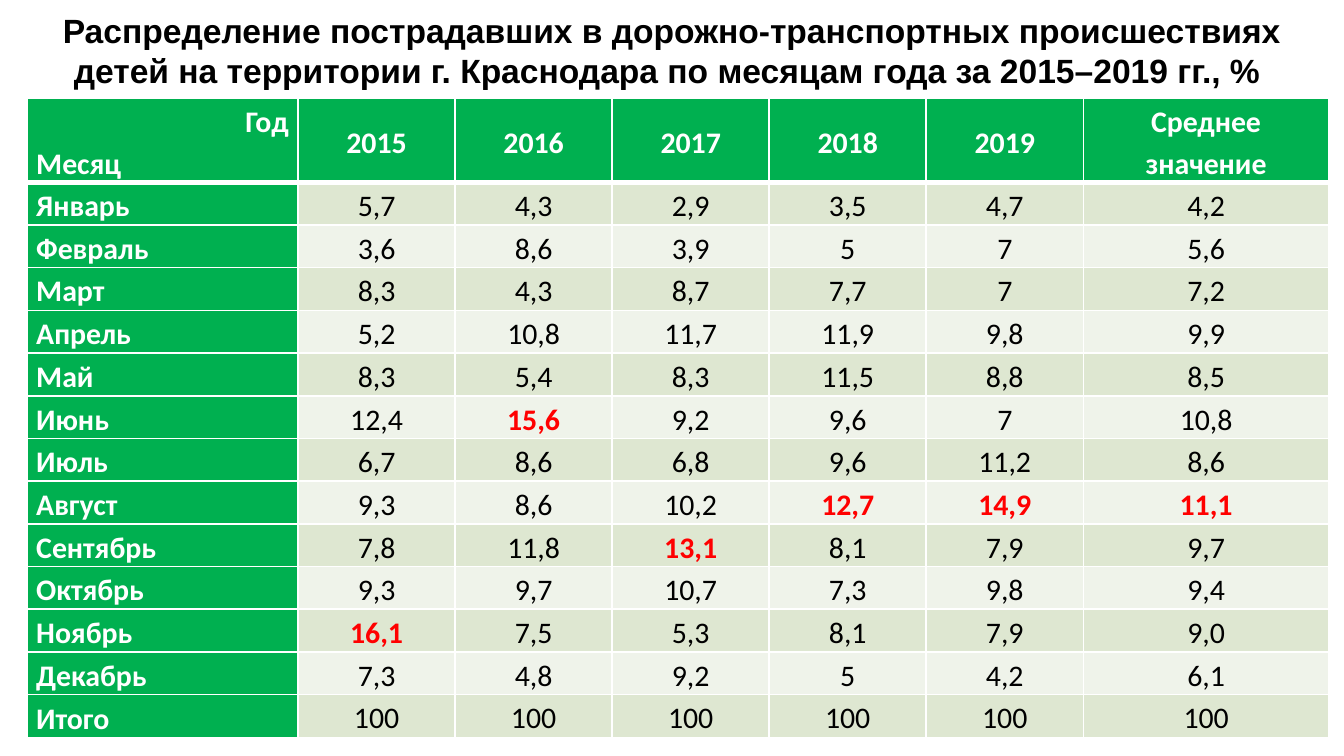
from lxml import etree
from pptx import Presentation
from pptx.dml.color import RGBColor
from pptx.enum.text import MSO_ANCHOR, MSO_AUTO_SIZE, PP_ALIGN
from pptx.oxml.ns import qn
from pptx.util import Inches, Pt

LEFT, CENTER, RIGHT, JUSTIFY = PP_ALIGN.LEFT, PP_ALIGN.CENTER, PP_ALIGN.RIGHT, PP_ALIGN.JUSTIFY
TOP, MIDDLE, BOTTOM = MSO_ANCHOR.TOP, MSO_ANCHOR.MIDDLE, MSO_ANCHOR.BOTTOM
GROW = MSO_AUTO_SIZE.SHAPE_TO_FIT_TEXT
TITLE_ONLY = 5

WHITE, BLACK, RED, GREEN = "FFFFFF", "000000", "FF0000", "00B050"
BANDS = ("DEE7D1", "EFF3EA")

TITLE = ("Распределение пострадавших в дорожно-транспортных происшествиях "
         "детей на территории г. Краснодара по месяцам года за 2015–2019 гг., % ")
HEADINGS = ["2015", "2016", "2017", "2018", "2019", "Среднее\nзначение"]
MONTHS = [
    ("Январь", "5,7 4,3 2,9 3,5 4,7 4,2"),
    ("Февраль", "3,6 8,6 3,9 5 7 5,6"),
    ("Март", "8,3 4,3 8,7 7,7 7 7,2"),
    ("Апрель", "5,2 10,8 11,7 11,9 9,8 9,9"),
    ("Май", "8,3 5,4 8,3 11,5 8,8 8,5"),
    ("Июнь", "12,4 15,6 9,2 9,6 7 10,8"),
    ("Июль", "6,7 8,6 6,8 9,6 11,2 8,6"),
    ("Август", "9,3 8,6 10,2 12,7 14,9 11,1"),
    ("Сентябрь", "7,8 11,8 13,1 8,1 7,9 9,7"),
    ("Октябрь", "9,3 9,7 10,7 7,3 9,8 9,4"),
    ("Ноябрь", "16,1 7,5 5,3 8,1 7,9 9,0"),
    ("Декабрь", "7,3 4,8 9,2 5 4,2 6,1"),
]
TOTAL = ("Итого", "100 100 100 100 100 100")
COLUMN_WIDTHS = [2.02] + [1.17] * 5 + [1.83]
ROW_HEIGHTS = [0.63] + [0.32] * 13


def rgb(value):
    """Turn a hex string into a colour."""
    return RGBColor.from_string(value)


def write(frame, text, aligns=(CENTER,), font="Calibri", size=16, color=BLACK,
          bold=False, spacing=1.15):
    """Write one paragraph per line of text, cycling through the alignments."""
    for index, line in enumerate(text.split("\n")):
        para = frame.paragraphs[0] if index == 0 else frame.add_paragraph()
        para.alignment = aligns[index % len(aligns)]
        para.line_spacing = spacing
        span = para.add_run()
        span.text = line
        span.font.name = font
        span.font.size = Pt(size)
        span.font.bold = bold
        span.font.color.rgb = rgb(color)


def set_border(cell, side, width, color=WHITE):
    """Add a solid border to one side of a cell."""
    properties = cell._tc.get_or_add_tcPr()
    line = etree.SubElement(properties, qn(f"a:ln{side}"), w=str(Pt(width)))
    fill = etree.SubElement(line, qn("a:solidFill"))
    etree.SubElement(fill, qn("a:srgbClr"), val=color)


def fill_cell(cell, text, fill, anchor=MIDDLE, top=1, bottom=1, **text_format):
    """Set the borders, fill, margins and text of a cell."""
    for side, width in (("L", 1), ("R", 1), ("T", top), ("B", bottom)):
        set_border(cell, side, width)
    cell.fill.solid()
    cell.fill.fore_color.rgb = rgb(fill)
    cell.vertical_anchor = anchor
    cell.margin_left = cell.margin_right = Inches(0.07)
    cell.margin_top = cell.margin_bottom = 0
    write(cell.text_frame, text, **text_format)


def add_title(page, left, top, width, height):
    """Place and format the slide title."""
    box = page.shapes.title
    box.left, box.top, box.width, box.height = map(Inches, (left, top, width, height))
    frame = box.text_frame
    frame.word_wrap = True
    frame.auto_size = GROW
    frame.vertical_anchor = TOP
    write(frame, TITLE, font="Arial", size=18, bold=True, spacing=1.0)


def add_month_table(page, left, top, width, height):
    """Add the table of monthly shares, with the peak of each column in red."""
    box = page.shapes.add_table(len(ROW_HEIGHTS), len(COLUMN_WIDTHS),
                                *map(Inches, (left, top, width, height)))
    table = box.table
    for column, share in zip(table.columns, COLUMN_WIDTHS):
        column.width = Inches(width * share / sum(COLUMN_WIDTHS))
    for row, share in zip(table.rows, ROW_HEIGHTS):
        row.height = Inches(height * share / sum(ROW_HEIGHTS))

    heading = {"color": WHITE, "bold": True}
    fill_cell(table.cell(0, 0), "Год\nМесяц", GREEN, anchor=BOTTOM, bottom=3,
              aligns=(RIGHT, LEFT), **heading)
    for column, text in enumerate(HEADINGS, 1):
        anchor = BOTTOM if "\n" in text else MIDDLE
        fill_cell(table.cell(0, column), text, GREEN, anchor=anchor, bottom=3, **heading)

    columns = zip(*(values.split() for _, values in MONTHS))
    peaks = [max(column, key=lambda value: float(value.replace(",", ".")))
             for column in columns]
    for row, (name, values) in enumerate(MONTHS + [TOTAL], 1):
        top_border = 3 if row == 1 else 1
        anchor = BOTTOM if name == TOTAL[0] else MIDDLE
        fill_cell(table.cell(row, 0), name, GREEN, anchor=anchor, top=top_border,
                  aligns=(JUSTIFY,), **heading)
        for column, (value, peak) in enumerate(zip(values.split(), peaks), 1):
            is_peak = value == peak
            fill_cell(table.cell(row, column), value, BANDS[(row - 1) % 2],
                      top=top_border, color=RED if is_peak else BLACK, bold=is_peak)


def main():
    """Build and save the deck."""
    deck = Presentation()
    deck.slide_width = Inches(10)
    deck.slide_height = deck.slide_width * 9 // 16
    page = deck.slides.add_slide(deck.slide_layouts[TITLE_ONLY])
    add_title(page, 0, 0.02, 10, 0.71)
    add_month_table(page, 0.2, 0.73, 9.69, 4.76)
    deck.save("out.pptx")


if __name__ == "__main__":
    main()
